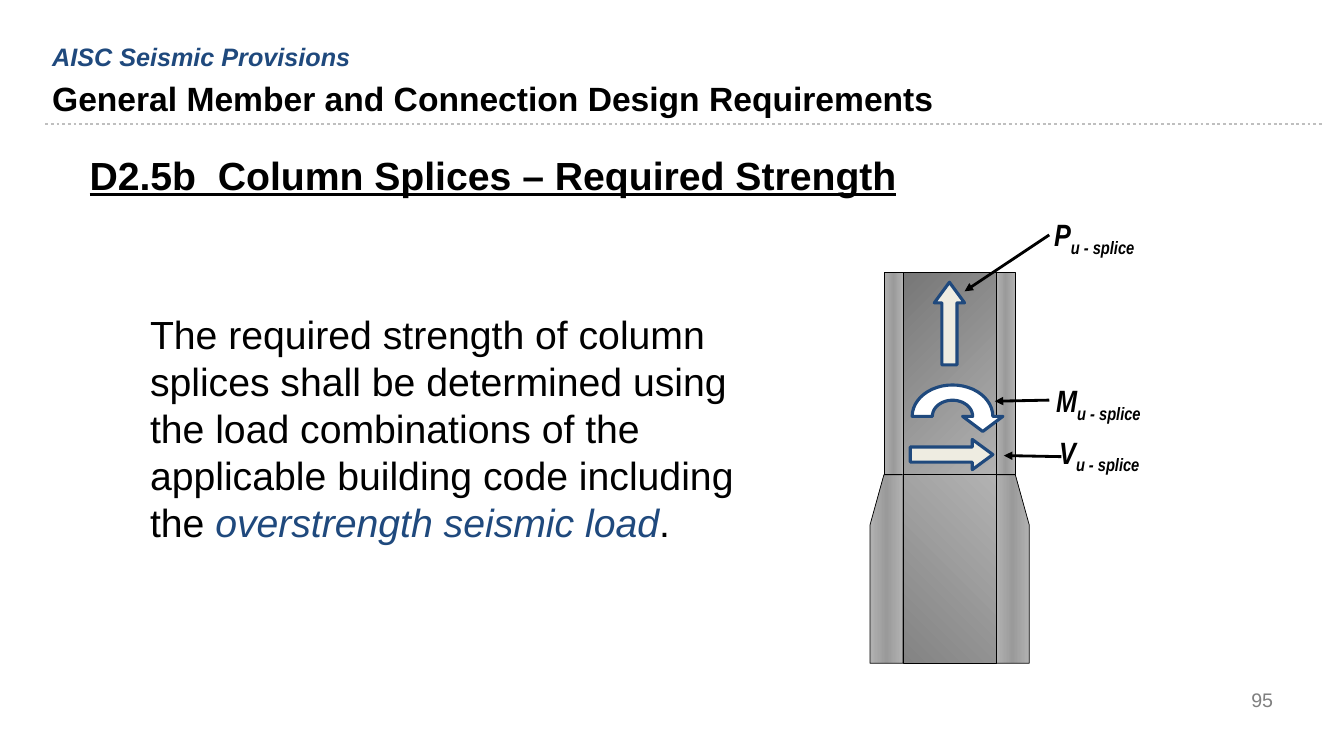
from copy import deepcopy
from math import cos, pi, sin

from lxml.etree import SubElement
from pptx import Presentation
from pptx.dml.color import RGBColor
from pptx.enum.dml import MSO_LINE
from pptx.enum.shapes import MSO_CONNECTOR, MSO_SHAPE
from pptx.enum.text import MSO_ANCHOR, PP_ALIGN
from pptx.oxml.ns import qn
from pptx.util import Pt

BLACK = RGBColor(0x00, 0x00, 0x00)
WHITE = RGBColor(0xFF, 0xFF, 0xFF)
NAVY = RGBColor(0x1F, 0x49, 0x7D)
CREAM = RGBColor(0xEE, 0xEC, 0xE1)
RULE_GRAY = RGBColor(0xBF, 0xBF, 0xBF)
NUMBER_GRAY = RGBColor(0x7F, 0x7F, 0x7F)
STEEL_LIGHT = RGBColor(0xB2, 0xB2, 0xB2)
STEEL_MIDDLE = RGBColor(0x9A, 0x9A, 0x9A)
STEEL_DARK = RGBColor(0x77, 0x77, 0x77)
STEEL_LOWER = RGBColor(0x83, 0x83, 0x83)

TITLE = "General Member and Connection Design Requirements"
SOURCE = "AISC Seismic Provisions"
HEADING = "D2.5b  Column Splices – Required Strength"
REQUIREMENT = [
    ("The required strength of column splices shall be determined using the load "
     "combinations of the applicable building code including the ", {}),
    ("overstrength seismic load", {"italic": True, "color": NAVY}),
    (".", {}),
]
PAGE_NUMBER = "95"
SPLICE_FORCES = [
    ("P", (745.9, 150.5, 98.6, 33.8), (749.5, 167.8), (689, 208.1)),
    ("M", (747.4, 269.3, 88.6, 33.8), (749.5, 285.8), (710.6, 286.6)),
    ("V", (749.5, 306, 80, 33.8), (758.2, 326.2), (717.1, 325.4)),
]
FORCE_SUBSCRIPT = "u - splice"
FORCE_ARROWS = [((667.4, 201.6, 21.6, 59), 0), ((668.9, 295.2, 21.6, 59), 90)]

COLUMN_CENTER = 678.3
WEB_HALF, UPPER_HALF, LOWER_HALF = 33.3, 46.9, 56.9
COLUMN_TOP, SPLICE_Y, TAPER_END, COLUMN_BOTTOM = 194.4, 339.1, 375.1, 473.8
FLANGE_STEEL = [STEEL_LIGHT, STEEL_MIDDLE, STEEL_LIGHT]

MOMENT_CENTER = (680.4, 297.4)
MOMENT_OUTER, MOMENT_INNER = (28.8, 22.4), (14.4, 11.5)
MOMENT_HEAD = [(716.4, 297.4), (702, 308.2), (687.6, 297.4)]
ARC_STEPS = 24

presentation = Presentation()
presentation.slide_width = Pt(960)
presentation.slide_height = Pt(540)
slide = presentation.slides.add_slide(presentation.slide_layouts[6])
shapes = slide.shapes


def points(values):
    return [Pt(value) for value in values]


def add_text(box, runs, size, name="Arial", color=BLACK, bold=False, italic=False,
             underline=False, align=PP_ALIGN.LEFT, anchor=MSO_ANCHOR.TOP):
    frame = shapes.add_textbox(*points(box)).text_frame
    frame.word_wrap = True
    frame.vertical_anchor = anchor
    paragraph = frame.paragraphs[0]
    paragraph.alignment = align
    font = paragraph.font
    font.size, font.name, font.bold = Pt(size), name, bold
    font.italic, font.underline = italic, underline
    font.color.rgb = color
    for text, style in runs:
        run = paragraph.add_run()
        run.text = text
        if "color" in style:
            run.font.color.rgb = style["color"]
        if "italic" in style:
            run.font.italic = style["italic"]
        if "baseline" in style:
            run.font._element.set("baseline", style["baseline"])


def add_line(start, end, color, width):
    line = shapes.add_connector(MSO_CONNECTOR.STRAIGHT, *points(start + end))
    line.line.color.rgb = color
    line.line.width = Pt(width)
    SubElement(line._element.spPr, qn("a:effectLst"))
    return line


def set_outline(shape, color, width):
    shape.shadow.inherit = False
    shape.line.color.rgb = color
    shape.line.width = Pt(width)


def paint_steel(shape, colors, angle):
    shape.fill.gradient()
    shape.fill.gradient_angle = angle
    stop_list = shape._element.spPr.find(qn("a:gradFill")).find(qn("a:gsLst"))
    while len(stop_list) < len(colors):
        stop_list.append(deepcopy(stop_list[0]))
    for index, stop in enumerate(shape.fill.gradient_stops):
        stop.position = index / (len(colors) - 1)
        stop.color.rgb = colors[index]
    set_outline(shape, BLACK, 0.5)


def add_plate(left, top, right, bottom, colors, angle):
    box = points((left, top, right - left, bottom - top))
    paint_steel(shapes.add_shape(MSO_SHAPE.RECTANGLE, *box), colors, angle)


def add_outline(outline):
    corners = [tuple(points(corner)) for corner in outline]
    builder = shapes.build_freeform(*corners[0])
    builder.add_line_segments(corners[1:], close=True)
    return builder.convert_to_shape()


def arc(radii, start, end):
    angles = [start + (end - start) * step / ARC_STEPS for step in range(ARC_STEPS + 1)]
    return [(MOMENT_CENTER[0] + radii[0] * cos(angle),
             MOMENT_CENTER[1] - radii[1] * sin(angle)) for angle in angles]


add_line((32.4, 88.6), (944.6, 88.6), RULE_GRAY, 2).line.dash_style = MSO_LINE.ROUND_DOT
add_text((30.2, 52.2, 861.8, 31.7), [(TITLE, {})], 24, bold=True)
add_text((30.2, 25.9, 861.8, 22.3), [(SOURCE, {})], 18, color=NAVY, bold=True, italic=True)
add_text((692.6, 485.3, 223.9, 28.8), [(PAGE_NUMBER, {})], 14, color=NUMBER_GRAY,
         align=PP_ALIGN.RIGHT, anchor=MSO_ANCHOR.MIDDLE)
add_text((56.9, 104.4, 667.4, 41), [(HEADING, {})], 28, bold=True, underline=True)
add_text((100.1, 218.2, 442.1, 177.1), REQUIREMENT, 28)

web_left, web_right = COLUMN_CENTER - WEB_HALF, COLUMN_CENTER + WEB_HALF
add_plate(web_right, COLUMN_TOP, COLUMN_CENTER + UPPER_HALF, SPLICE_Y, FLANGE_STEEL, 0)
add_plate(web_left, COLUMN_TOP, web_right, SPLICE_Y, [STEEL_DARK, STEEL_LIGHT], 315)
add_plate(COLUMN_CENTER - UPPER_HALF, COLUMN_TOP, web_left, SPLICE_Y, FLANGE_STEEL, 0)
for side in (1, -1):
    flange = [(WEB_HALF, SPLICE_Y), (WEB_HALF, COLUMN_BOTTOM), (LOWER_HALF, COLUMN_BOTTOM),
              (LOWER_HALF, TAPER_END), (UPPER_HALF, SPLICE_Y)]
    outline = [(COLUMN_CENTER + side * offset, y) for offset, y in flange]
    paint_steel(add_outline(outline), FLANGE_STEEL, 0)
add_plate(web_left, SPLICE_Y, web_right, COLUMN_BOTTOM, [STEEL_LOWER, STEEL_LIGHT], 45)

for box, rotation in FORCE_ARROWS:
    arrow = shapes.add_shape(MSO_SHAPE.UP_ARROW, *points(box))
    arrow.adjustments[0], arrow.adjustments[1] = 0.5, 0.682
    arrow.rotation = rotation
    arrow.fill.solid()
    arrow.fill.fore_color.rgb = CREAM
    set_outline(arrow, NAVY, 2.25)

moment = add_outline(arc(MOMENT_INNER, 0, pi) + arc(MOMENT_OUTER, pi, 0) + MOMENT_HEAD)
moment.fill.solid()
moment.fill.fore_color.rgb = WHITE
set_outline(moment, NAVY, 2.25)

for symbol, box, start, end in SPLICE_FORCES:
    add_text(box, [(symbol, {}), (FORCE_SUBSCRIPT, {"baseline": "-25000"})], 22,
             name="Arial Narrow", bold=True, italic=True)
    leader = add_line(start, end, BLACK, 2)
    SubElement(leader.line._get_or_add_ln(), qn("a:tailEnd"), type="triangle")

presentation.save("out.pptx")
